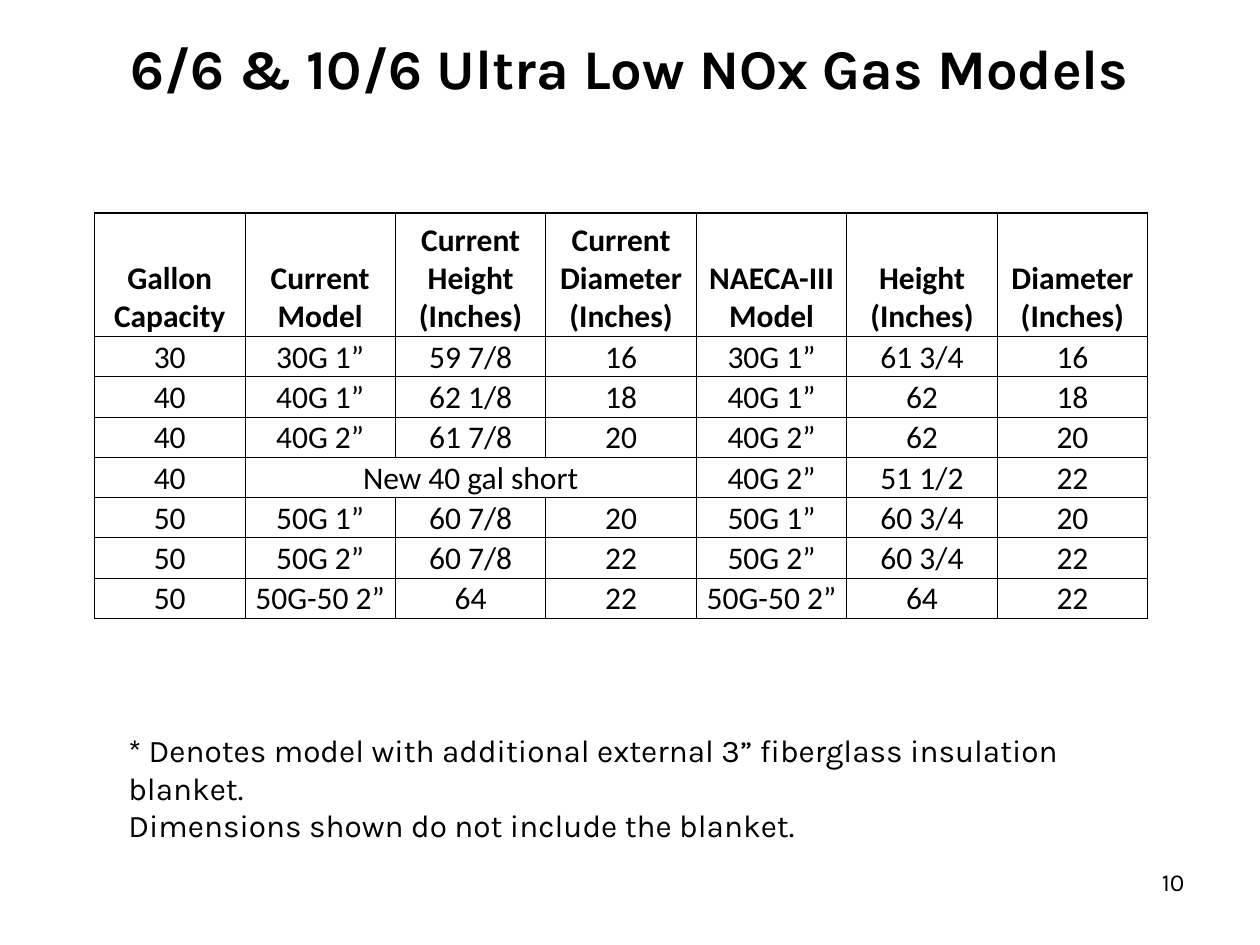
from lxml import etree
from pptx import Presentation
from pptx.dml.color import RGBColor
from pptx.enum.text import MSO_ANCHOR, PP_ALIGN
from pptx.oxml.ns import qn
from pptx.util import Inches, Pt

LEFT, CENTER, RIGHT = PP_ALIGN.LEFT, PP_ALIGN.CENTER, PP_ALIGN.RIGHT
TOP, MIDDLE, BOTTOM = MSO_ANCHOR.TOP, MSO_ANCHOR.MIDDLE, MSO_ANCHOR.BOTTOM
BLACK = RGBColor(0, 0, 0)
TITLE_ONLY = 5

HEADINGS = ["Gallon Capacity", "Current Model", "Current Height (Inches)",
            "Current Diameter (Inches)", "NAECA-III Model", "Height (Inches)",
            "Diameter (Inches)"]
MODELS = [
    ["30", "30G 1”", "59 7/8", "16", "30G 1”", "61 3/4", "16"],
    ["40", "40G 1”", "62 1/8", "18", "40G 1”", "62", "18"],
    ["40", "40G 2”", "61 7/8", "20", "40G 2”", "62", "20"],
    ["40", "New 40 gal short", None, None, "40G 2”", "51 1/2", "22"],
    ["50", "50G 1”", "60 7/8", "20", "50G 1”", "60 3/4", "20"],
    ["50", "50G 2”", "60 7/8", "22", "50G 2”", "60 3/4", "22"],
    ["50", "50G-50 2”", "64", "22", "50G-50 2”", "64", "22"],
]


class SlideBuilder:
    text_font = "Karla"
    table_font = "Calibri"

    def __init__(self, page):
        self.page = page

    def style(self, paragraph, font_name, size, align, bold=False):
        paragraph.alignment = align
        font = paragraph.font
        font.name, font.size, font.bold = font_name, Pt(size), bold
        font.color.rgb = BLACK

    def fill_text(self, box, place, lines, size, align, anchor, bold=False):
        box.left, box.top, box.width, box.height = map(Inches, place)
        frame = box.text_frame
        frame.word_wrap = True
        frame.vertical_anchor = anchor
        frame.text = "\n".join(lines)
        for paragraph in frame.paragraphs:
            self.style(paragraph, self.text_font, size, align, bold)

    def title(self, text, place):
        self.fill_text(self.page.shapes.title, place, [text], 32, CENTER, MIDDLE, True)

    def text(self, lines, place, size, align):
        box = self.page.shapes.add_textbox(*map(Inches, place))
        self.fill_text(box, place, lines, size, align, TOP)

    def borders(self, cell, widths):
        properties = cell._tc.get_or_add_tcPr()
        for index, (side, width) in enumerate(widths.items()):
            line = etree.Element(qn(f"a:ln{side}"), w=str(Pt(width)))
            fill = etree.SubElement(line, qn("a:solidFill"))
            etree.SubElement(fill, qn("a:srgbClr"), val=str(BLACK))
            properties.insert(index, line)

    def cell(self, cell, text, is_heading, widths):
        cell.margin_left = cell.margin_right = cell.margin_top = Inches(0.01)
        cell.margin_bottom = 0
        cell.vertical_anchor = BOTTOM
        cell.fill.background()
        cell.text = text or ""
        self.style(cell.text_frame.paragraphs[0], self.table_font, 18, CENTER, is_heading)
        self.borders(cell, widths)

    def table(self, rows, place, heading_height, row_height):
        frame = self.page.shapes.add_table(len(rows), len(rows[0]), *map(Inches, place))
        table = frame.table
        table.first_row = table.horz_banding = False
        for row_index, values in enumerate(rows):
            is_heading = row_index == 0
            table.rows[row_index].height = Inches(heading_height if is_heading else row_height)
            for column, text in enumerate(values):
                widths = {
                    "L": 1 if is_heading and column == 0 else 0.5,
                    "R": 1 if is_heading and column == len(values) - 1 else 0.5,
                    "T": 1 if row_index < 2 else 0.5,
                    "B": 1 if is_heading else 0.5,
                }
                self.cell(table.cell(row_index, column), text, is_heading, widths)
            if None in values:
                first = values.index(None) - 1
                last = first + values.count(None)
                table.cell(row_index, first).merge(table.cell(row_index, last))


def main():
    deck = Presentation()
    deck.slide_width, deck.slide_height = Inches(10), Inches(7.5)
    builder = SlideBuilder(deck.slides.add_slide(deck.slide_layouts[TITLE_ONLY]))
    builder.title("6/6 & 10/6 Ultra Low NOx Gas Models", (0.5, 0.22, 9, 0.62))
    builder.text(["10"], (7.17, 6.83, 2.33, 0.52), 14, RIGHT)
    builder.text(["* Denotes model with additional external 3” fiberglass insulation blanket.",
                  "Dimensions shown do not include the blanket."],
                 (0.92, 5.75, 8.24, 0.71), 18, LEFT)
    builder.table([HEADINGS] + MODELS, (0.75, 1.69, 8.36, 3.24), 0.98, 0.32)
    deck.save("out.pptx")


if __name__ == "__main__":
    main()
